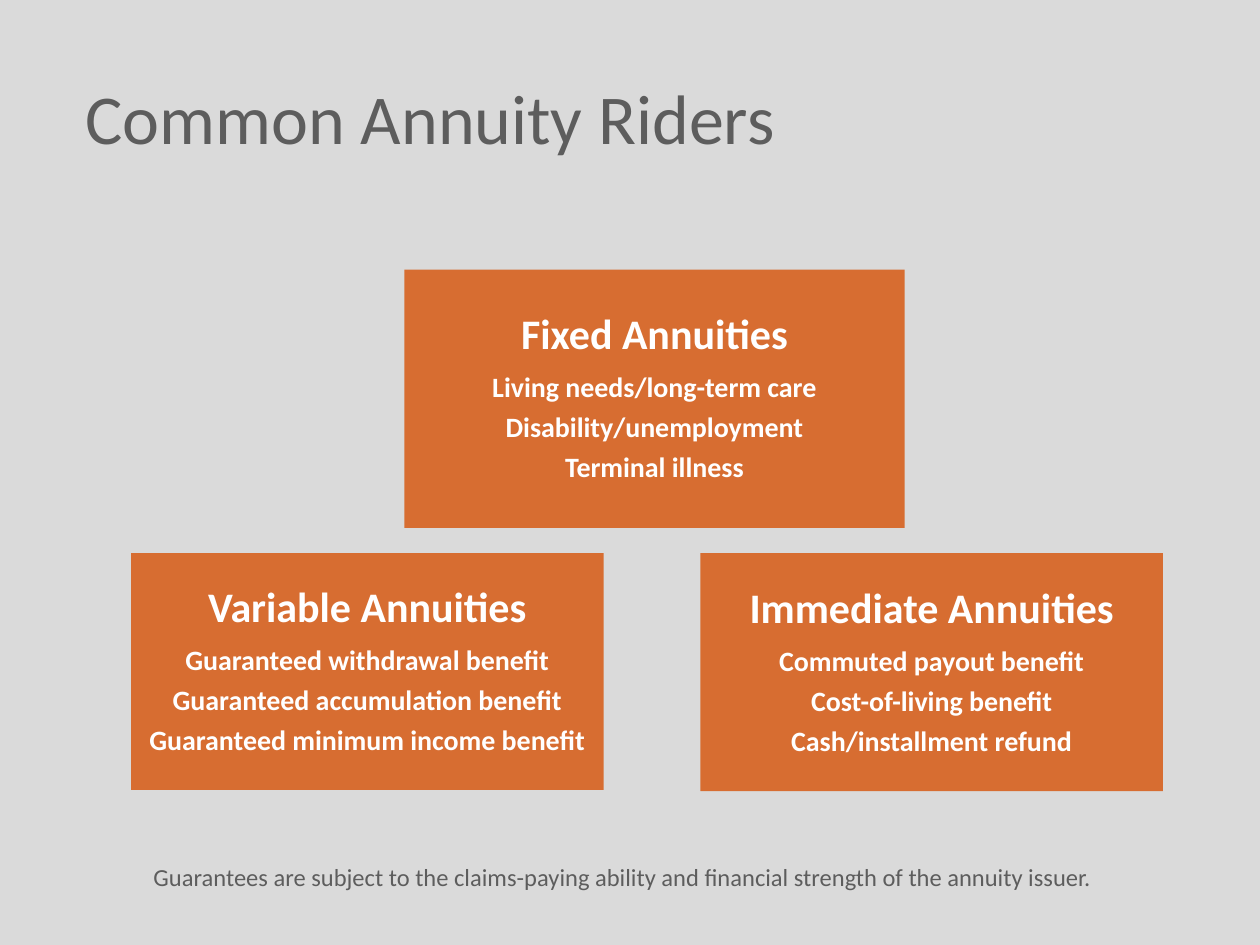
"""Build a slide of common annuity riders in three labelled boxes."""
from dataclasses import dataclass

import pptx
import pptx.dml.color
import pptx.enum.shapes
import pptx.enum.text
import pptx.util

COLORS = {"background": "DADADA", "text": "5D5D5D", "card": "D76D31", "card_text": "FFFFFF"}
WIDTH, HEIGHT = pptx.util.Inches(10), pptx.util.Inches(7.5)
CENTER = pptx.enum.text.PP_ALIGN.CENTER
LEFT = pptx.enum.text.PP_ALIGN.LEFT
MIDDLE = pptx.enum.text.MSO_ANCHOR.MIDDLE
TOP = pptx.enum.text.MSO_ANCHOR.TOP
CARD_SPACING = 0.35


@dataclass(frozen=True)
class Area:
    """Hold a position and size in percent of the slide."""

    left: float
    top: float
    width: float
    height: float

    def lengths(self) -> dict:
        """Return the area as shape attributes."""
        return {
            "left": int(WIDTH * self.left / 100),
            "top": int(HEIGHT * self.top / 100),
            "width": int(WIDTH * self.width / 100),
            "height": int(HEIGHT * self.height / 100),
        }


@dataclass(frozen=True)
class Card:
    """Hold an annuity type and its riders."""

    area: Area
    heading: str
    riders: tuple[str, ...]


CARDS = (
    Card(Area(32.1, 28.53, 39.7, 27.33), "Fixed Annuities",
         ("Living needs/long-term care", "Disability/unemployment", "Terminal illness")),
    Card(Area(10.4, 58.53, 37.5, 25.07), "Variable Annuities",
         ("Guaranteed withdrawal benefit", "Guaranteed accumulation benefit",
          "Guaranteed minimum income benefit")),
    Card(Area(55.6, 58.53, 36.7, 25.2), "Immediate Annuities",
         ("Commuted payout benefit", "Cost-of-living benefit", "Cash/installment refund")),
)


def color(name: str) -> pptx.dml.color.RGBColor:
    """Look up a named colour."""
    return pptx.dml.color.RGBColor.from_string(COLORS[name])


def apply(target, values: dict) -> None:
    """Set attributes from a dict of format values."""
    for name, value in values.items():
        setattr(target, name, value)


def write(paragraph, text: str, size: int, ink: str, bold: bool = False) -> None:
    """Write one formatted span into a paragraph."""
    span = paragraph.add_run()
    span.text = text
    apply(span.font, {"name": "Calibri", "size": pptx.util.Pt(size), "bold": bold})
    span.font.color.rgb = color(ink)


def write_line(box, area: Area, text: str, size: int, anchor) -> None:
    """Place a box and fill it with one line of text."""
    apply(box, area.lengths())
    apply(box.text_frame, {"word_wrap": True, "vertical_anchor": anchor})
    paragraph = box.text_frame.paragraphs[0]
    paragraph.alignment = LEFT
    write(paragraph, text, size, "text")


def draw_card(page, card: Card) -> None:
    """Draw a filled box with a heading and its riders."""
    box = page.shapes.add_shape(
        pptx.enum.shapes.MSO_SHAPE.RECTANGLE, **card.area.lengths())
    box.shadow.inherit = False
    box.fill.solid()
    box.fill.fore_color.rgb = color("card")
    box.line.fill.background()
    margin = pptx.util.Inches(0.1)
    frame = box.text_frame
    apply(frame, {"word_wrap": True, "vertical_anchor": MIDDLE, "margin_left": margin,
                  "margin_right": margin, "margin_top": margin, "margin_bottom": margin})
    for index, text in enumerate((card.heading, *card.riders)):
        paragraph = frame.add_paragraph() if index else frame.paragraphs[0]
        size = 16 if index else 24
        apply(paragraph, {"alignment": CENTER, "line_spacing": 0.9,
                          "space_after": pptx.util.Pt(size * CARD_SPACING)})
        write(paragraph, text, size, "card_text", bold=True)


def main() -> None:
    """Build and save the deck."""
    deck = pptx.Presentation()
    apply(deck, {"slide_width": WIDTH, "slide_height": HEIGHT})
    page = deck.slides.add_slide(deck.slide_layouts.get_by_name("Title Only"))
    page.background.fill.solid()
    page.background.fill.fore_color.rgb = color("background")
    write_line(page.shapes.title, Area(5.8, 7.73, 78.1, 9.2),
               "Common Annuity Riders", 40, MIDDLE)
    for card in CARDS:
        draw_card(page, card)
    footer = Area(11.2, 90.53, 88.7, 4.53)
    write_line(page.shapes.add_textbox(**footer.lengths()), footer,
               "Guarantees are subject to the claims-paying ability and financial "
               "strength of the annuity issuer.", 14, TOP)
    deck.save("out.pptx")


if __name__ == "__main__":
    main()
